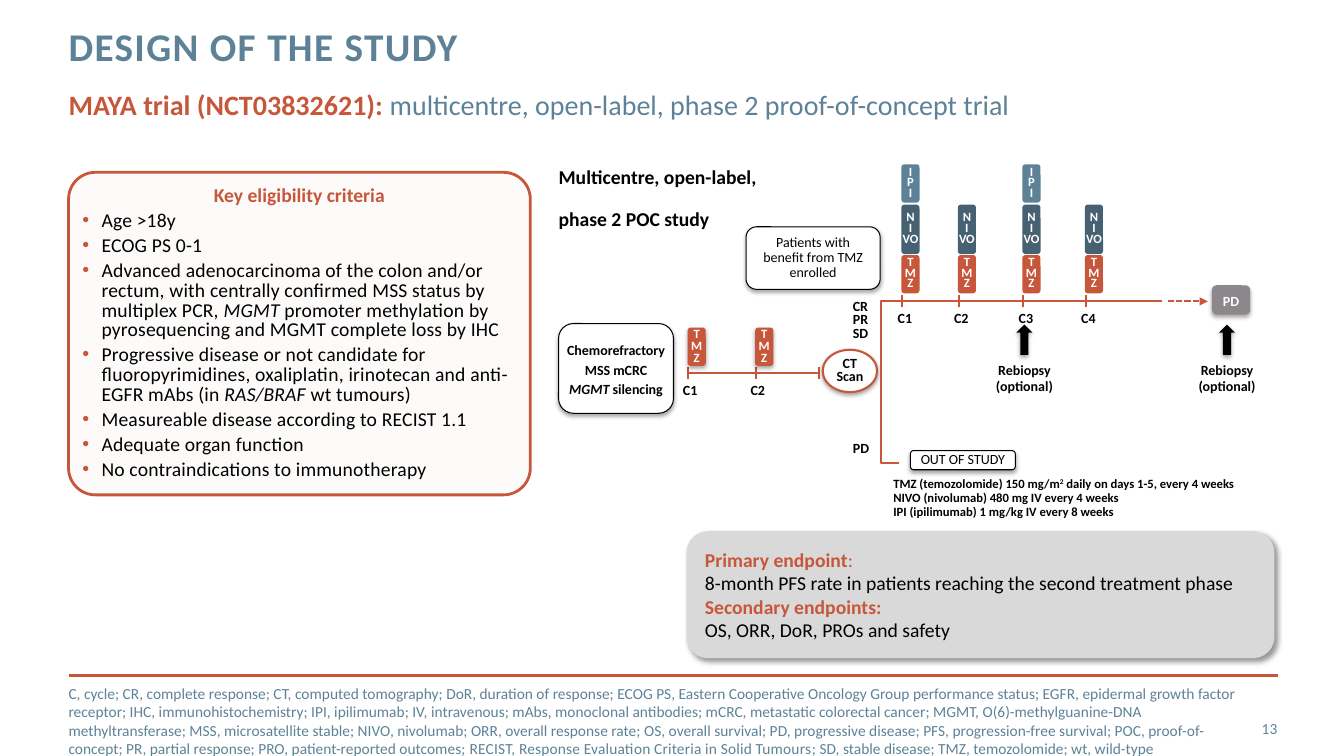
import pptx
import pptx.dml.color
import pptx.enum.dml
import pptx.enum.shapes
import pptx.enum.text
import pptx.oxml
import pptx.oxml.ns
import pptx.util
from dataclasses import dataclass

Shape = pptx.enum.shapes.MSO_SHAPE
Align = pptx.enum.text.PP_ALIGN
Anchor = pptx.enum.text.MSO_ANCHOR
Pt = pptx.util.Pt
COLUMNS, ROWS = 133.3, 75
WIDTH, HEIGHT = pptx.util.Inches(13.33), pptx.util.Inches(7.5)


@dataclass(frozen=True)
class Theme:
    font: str = "Calibri"
    accent: str = "C6573B"
    blue: str = "5D8298"
    slate: str = "466172"
    grey: str = "8B878B"
    panel: str = "D9D9D9"
    cream: str = "FDFBFA"
    black: str = "000000"
    white: str = "FFFFFF"
    title: int = 28
    subtitle: int = 20
    body: int = 14
    note: int = 11
    label: int = 10
    dose: int = 9
    rule: float = 2
    axis: float = 1.5
    outline: float = 0.75


THEME = Theme()
SOFT_SHADOW = (35, 3.1, 1.8, 90)
PANEL_SHADOW = (40, 4, 3, 45)
LABEL = dict(size=THEME.label, color=THEME.black, bold=True)
PLAIN_LABEL = dict(LABEL, bold=False)
BODY = dict(size=THEME.body, color=THEME.black, bold=False)
HEADING = dict(BODY, color=THEME.accent, bold=True)
DOSE = dict(size=THEME.dose, color=THEME.white, bold=True)
NOTE = dict(size=THEME.note, color=THEME.blue)
CENTERED = dict(alignment=Align.CENTER)
TIGHT = dict(CENTERED, line_spacing=0.8)
DRUGS = {
    "TMZ": ("T\nM\nZ", 25.3, 3.8, THEME.accent),
    "NIVO": ("N\nI\nVO", 20.3, 4.9, THEME.slate),
    "IPI": ("I\nP\nI", 16.3, 3.8, THEME.blue),
}
CYCLES = [("C1", 89.4, True), ("C2", 95, False), ("C3", 101.4, True), ("C4", 107.6, False)]
ITALIC = dict(italic=True)
CRITERIA = [
    [("Age >18y", {})],
    [("ECOG PS 0-1", {})],
    [("Advanced adenocarcinoma of the colon and/or rectum, with centrally confirmed MSS status by multiplex PCR, ", {}),
     ("MGMT", ITALIC), (" promoter methylation by pyrosequencing and MGMT complete loss by IHC", {})],
    [("Progressive disease or not candidate for fluoropyrimidines, oxaliplatin, irinotecan and anti-EGFR mAbs (in ", {}),
     ("RAS/BRAF ", ITALIC), ("wt tumours)", {})],
    [("Measureable disease according to RECIST 1.1", {})],
    [("Adequate organ function", {})],
    [("No contraindications to immunotherapy", {})],
]
ABBREVIATIONS = [
    ("C, cycle; CR, complete response; CT, computed tomography; DoR, duration of response; ECOG PS, Eastern Cooperative "
     "Oncology Group performance status; EGFR, epidermal growth factor receptor; IHC, immunohistochemistry; IPI, ipilimumab; "
     "IV, intravenous; mAbs, monoclonal antibodies; mCRC, metastatic colorectal cancer; MGMT, O(6)-methylguanine-DNA "
     "methyltransferase; MSS, microsatellite stable; NIVO, nivolumab; ORR, overall response rate; OS, overall survival; "
     "PD, progressive disease; PFS, progression-free survival; POC, proof-of-concept; PR, partial response; "
     "PRO, patient-reported outcomes; ", {}),
    ("RECIST, Response Evaluation Criteria in Solid Tumours", dict(spc=10)),
    ("; SD, stable disease; TMZ, temozolomide; wt, wild-type", {}),
]


def col(n):
    return round(WIDTH * n / COLUMNS)


def row(n):
    return round(HEIGHT * n / ROWS)


def place(box):
    left, top, width, height = box
    return col(left), row(top), col(width), row(height)


def rgb(color):
    return pptx.dml.color.RGBColor.from_string(color)


def assign(target, values):
    for name, value in values.items():
        setattr(target, name, value)


def element(xml):
    return pptx.oxml.parse_xml(xml.replace(">", f' {pptx.oxml.ns.nsdecls("a")}>', 1))


def add_run(paragraph, text, style):
    run = paragraph.add_run()
    run.text = text
    run.font.name = THEME.font
    for name, value in style.items():
        if name == "color":
            run.font.color.rgb = rgb(value)
        elif name == "size":
            run.font.size = Pt(value)
        elif name in ("spc", "baseline"):
            run._r.get_or_add_rPr().set(name, str(value))
        else:
            setattr(run.font, name, value)


def add_bullet(paragraph):
    properties = paragraph._p.get_or_add_pPr()
    properties.set("marL", str(col(2)))
    properties.set("indent", str(-col(1.9)))
    properties.append(element(f'<a:buClr><a:srgbClr val="{THEME.accent}"/></a:buClr>'))
    properties.append(element('<a:buFont typeface="Arial"></a:buFont>'))
    properties.append(element('<a:buChar char="•"></a:buChar>'))


def write(shape, paragraphs, style, layout=None, insets=(0, 0, 0, 0), anchor=Anchor.TOP, wrap=True):
    frame = shape.text_frame
    margins = zip(("margin_left", "margin_top", "margin_right", "margin_bottom"), map(col, insets))
    assign(frame, dict(margins, word_wrap=wrap, vertical_anchor=anchor, auto_size=pptx.enum.text.MSO_AUTO_SIZE.NONE))
    if isinstance(paragraphs, str):
        paragraphs = [[(paragraphs, {})]]
    for index, segments in enumerate(paragraphs):
        paragraph = frame.add_paragraph() if index else frame.paragraphs[0]
        assign(paragraph, dict(alignment=Align.LEFT) | (layout or {}))
        for text, changes in segments:
            for line_number, line in enumerate(text.split("\n")):
                if line_number:
                    paragraph.add_line_break()
                if line:
                    add_run(paragraph, line, style | changes)
    return frame


def add_label(slide, box, paragraphs, style, layout=None, **frame):
    return write(slide.shapes.add_textbox(*place(box)), paragraphs, style, layout, **frame)


def add_block(slide, kind, box, fill, line=None, weight=THEME.outline, shadow=None):
    block = slide.shapes.add_shape(kind, *place(box))
    block.shadow.inherit = False
    block.fill.solid()
    block.fill.fore_color.rgb = rgb(fill)
    if line:
        block.line.color.rgb = rgb(line)
        block.line.width = Pt(weight)
    else:
        block.line.fill.background()
    if shadow:
        alpha, blur, distance, angle = shadow
        block._element.spPr.find(pptx.oxml.ns.qn("a:effectLst")).append(element(
            f'<a:outerShdw blurRad="{Pt(blur)}" dist="{Pt(distance)}" dir="{angle * 60000}" algn="ctr" rotWithShape="0">'
            f'<a:srgbClr val="{THEME.black}"><a:alpha val="{alpha * 1000}"/></a:srgbClr></a:outerShdw>'))
    return block


def add_line(slide, start, end, weight=THEME.axis, arrow=False):
    line = slide.shapes.add_connector(pptx.enum.shapes.MSO_CONNECTOR.STRAIGHT,
                                      col(start[0]), row(start[1]), col(end[0]), row(end[1]))
    assign(line.line, dict(width=Pt(weight)))
    line.line.color.rgb = rgb(THEME.accent)
    if arrow:
        line.line.dash_style = pptx.enum.dml.MSO_LINE.SQUARE_DOT
        line.line._get_or_add_ln().append(element('<a:tailEnd type="triangle"></a:tailEnd>'))
    line._element.spPr.append(element("<a:effectLst></a:effectLst>"))


def add_dose(slide, drug, left, top=None, spacing=0.7, shadow=None):
    letters, stack_top, height, color = DRUGS[drug]
    dose = add_block(slide, Shape.ROUNDED_RECTANGLE, (left, top or stack_top, 1.8, height), color, shadow=shadow)
    write(dose, letters, DOSE, dict(CENTERED, line_spacing=spacing), anchor=Anchor.MIDDLE)


def add_card(slide, box, paragraphs, style, spacing, fill=THEME.white, line=THEME.black):
    card = add_block(slide, Shape.ROUNDED_RECTANGLE, box, fill, line, shadow=SOFT_SHADOW)
    write(card, paragraphs, style, dict(CENTERED, line_spacing=spacing), anchor=Anchor.MIDDLE)


def add_headings(slide):
    title = slide.shapes.title
    assign(title, dict(zip(("left", "top", "width", "height"), place((6.8, 2.7, 95.6, 4.9)))))
    write(title, "DESIGN OF THE STUDY", dict(size=THEME.title, color=THEME.blue, bold=True, spc=100),
          dict(line_spacing=Pt(30)))
    add_label(slide, (6.8, 8.7, 100.3, 3.9),
              [[("MAYA trial (NCT03832621): ", dict(color=THEME.accent, bold=True)),
                ("multicentre, open-label, phase 2 proof-of-concept trial", {})]],
              dict(size=THEME.subtitle, color=THEME.blue, bold=False))


def add_criteria(slide):
    panel = add_block(slide, Shape.ROUNDED_RECTANGLE, (6.8, 17.1, 45.8, 32), THEME.cream, THEME.accent, THEME.rule)
    panel.adjustments[0] = 0.083
    frame = write(panel, [[("Key eligibility criteria", HEADING | dict(spc=0))]] + CRITERIA, dict(BODY, spc=10),
                  dict(line_spacing=Pt(14), space_after=Pt(4)), (0.5,) * 4, Anchor.MIDDLE)
    frame.paragraphs[0].alignment = Align.CENTER
    for criterion in frame.paragraphs[1:]:
        add_bullet(criterion)


def add_screening_phase(slide):
    add_card(slide, (55.4, 32.1, 11.4, 8.9),
             [[("Chemorefractory\nMSS mCRC\n", {}), ("MGMT", ITALIC), (" silencing", {})]], LABEL, Pt(14))
    add_line(slide, (68.2, 37), (81.2, 37))
    for tick in (68.2, 75, 81.2):
        add_line(slide, (tick, 37.6), (tick, 36.4))
    for cycle, left in (("C1", 68.2), ("C2", 74.9)):
        add_dose(slide, "TMZ", left, 32.5, 0.8, SOFT_SHADOW)
        add_label(slide, (left - 1.5, 37.4, 3.5, 2.7), cycle, LABEL, CENTERED, insets=(1, 0.5, 1, 0.5), wrap=False)
    scan = add_block(slide, Shape.OVAL, (81.6, 34.7, 5.4, 4.2), THEME.white, THEME.accent, THEME.axis, SOFT_SHADOW)
    write(scan, "CT\nScan", LABEL, TIGHT, (0, 0.5, 0, 0.5), Anchor.MIDDLE)
    add_label(slide, (84.6, 29.8, 1.5, 4.1), "CR\nPR\nSD", LABEL, TIGHT, wrap=False)
    add_label(slide, (84.6, 43.6, 1.6, 1.7), "PD", LABEL, CENTERED, wrap=False)


def add_treatment_phase(slide):
    add_card(slide, (74, 22.5, 13.3, 6.2), "Patients with\nbenefit from TMZ\nenrolled", PLAIN_LABEL, 0.9)
    corners = [(col(x), row(y)) for x, y in ((89.2, 45.9), (87.4, 45.9), (87.4, 29.9), (115.2, 29.9))]
    outline = slide.shapes.build_freeform(*corners[0])
    outline.add_line_segments(corners[1:], close=False)
    branches = outline.convert_to_shape()
    branches.shadow.inherit = False
    branches.fill.background()
    branches.line.color.rgb = rgb(THEME.accent)
    branches.line.width = Pt(THEME.axis)
    for cycle, left, with_ipi in CYCLES:
        for drug in ("TMZ", "NIVO", "IPI") if with_ipi else ("TMZ", "NIVO"):
            add_dose(slide, drug, left)
        add_line(slide, (left + 0.1, 30.5), (left + 0.1, 29.3))
        add_label(slide, (left - 0.4, 31, 1.5, 1.4), cycle, LABEL, TIGHT, wrap=False)
    add_line(slide, (115.8, 29.9), (119.8, 29.9), arrow=True)
    add_card(slide, (120.2, 28.3, 3.8, 2.9), "PD", dict(LABEL, color=THEME.white), Pt(14), THEME.grey, None)
    for left in (100.8, 120.9):
        add_block(slide, Shape.UP_ARROW, (left, 32.2, 1.6, 3), THEME.black, shadow=SOFT_SHADOW)
        add_label(slide, (left - 2.1, 36.1, 5.8, 3), "Rebiopsy\n(optional)", LABEL,
                  dict(CENTERED, line_spacing=0.9), wrap=False)
    add_card(slide, (90.3, 44.7, 10.4, 1.9), "OUT OF STUDY", PLAIN_LABEL, 0.9)
    add_label(slide, (88.6, 47.4, 34.5, 4.1),
              [[("TMZ (temozolomide) 150 mg/m", {}), ("2", dict(baseline=30000)), (" daily on days 1-5, every 4 weeks", {})],
               [("NIVO (nivolumab) 480 mg IV every 4 weeks", {})], [("IPI (ipilimumab) 1 mg/kg IV every 8 weeks", {})]],
              dict(DOSE, color=THEME.black), dict(line_spacing=0.9), wrap=False)
    design = add_label(slide, (55.4, 16.6, 20.1, 4.2), [[("Multicentre, open-label,", {})], [("phase 2 POC study", {})]],
                       dict(BODY, bold=True), dict(line_spacing=0.9), wrap=False)
    design.paragraphs[1].space_before = Pt(15)


def add_endpoints(slide):
    panel = add_block(slide, Shape.ROUNDED_RECTANGLE, (68.1, 52.7, 58.3, 12.6), THEME.panel, shadow=PANEL_SHADOW)
    write(panel, [[("Primary endpoint", HEADING), (":", dict(color=THEME.accent))],
                  [("8-month PFS rate in patients reaching the second treatment phase", {})],
                  [("Secondary endpoints:", HEADING)],
                  [("OS, ORR, DoR, PROs and safety", {})]], BODY, insets=(1.2, 0.5, 0.4, 0.5), anchor=Anchor.MIDDLE)


def add_footer(slide):
    add_line(slide, (6.8, 67), (126.8, 67), THEME.rule)
    add_label(slide, (6.8, 69.5, 117.7, 4), [ABBREVIATIONS], NOTE, anchor=Anchor.MIDDLE)
    add_label(slide, (118.1, 70.3, 8.6, 4), "13", NOTE, dict(alignment=Align.RIGHT), anchor=Anchor.MIDDLE)


def main():
    deck = pptx.Presentation()
    assign(deck, dict(slide_width=WIDTH, slide_height=HEIGHT))
    slide = deck.slides.add_slide(deck.slide_layouts[5])
    for add_part in (add_headings, add_criteria, add_screening_phase, add_treatment_phase, add_endpoints, add_footer):
        add_part(slide)
    deck.save("out.pptx")


if __name__ == "__main__":
    main()
